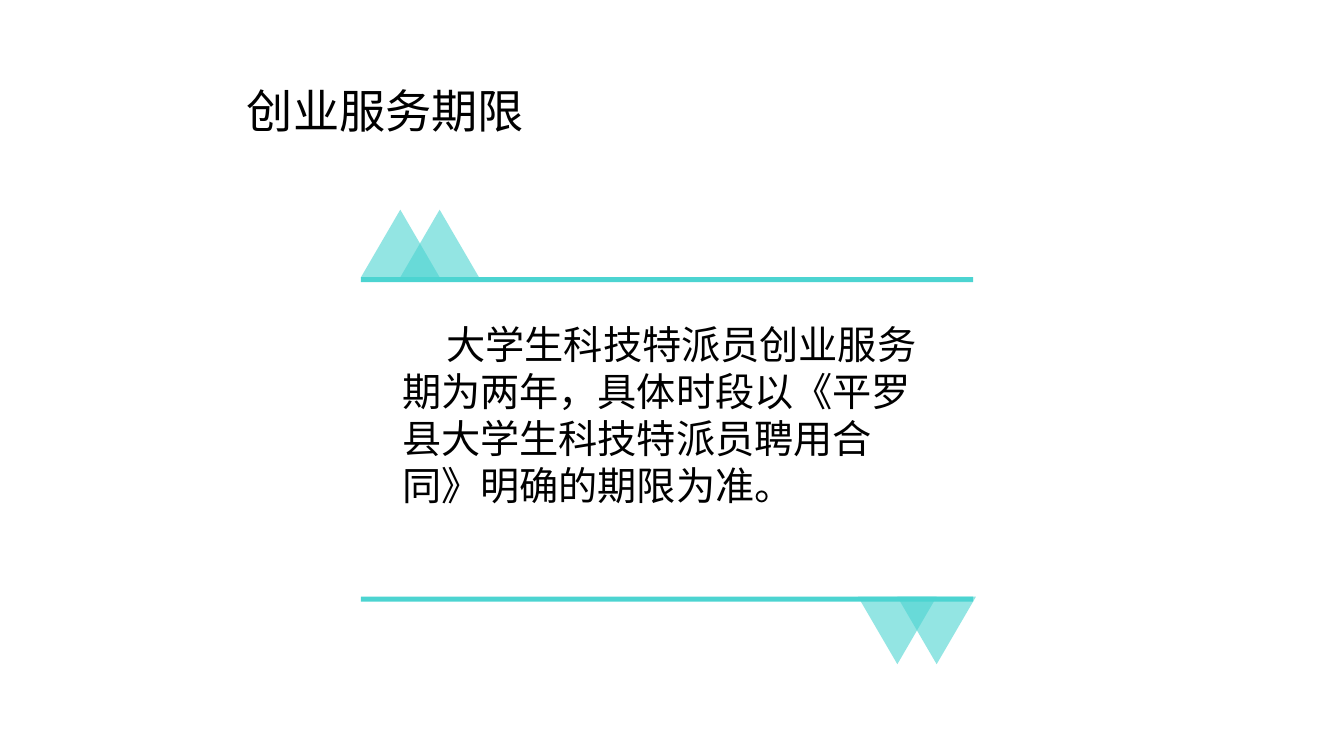
from lxml import etree
from pptx import Presentation, util as u
from pptx.dml.color import RGBColor
from pptx.enum import shapes, text
from pptx.oxml.ns import qn

WIDTH, HEIGHT = u.Inches(13.33), u.Inches(7.5)
TEAL, BLACK = "4CD4D1", "000000"
CJK_FONT = "Noto Sans CJK SC"
BAR_LEFT, BAR_WIDTH, BAR_HEIGHT = 26.86, 45.54, 0.67
TOP_BAR, BOTTOM_BAR = 36.67, 78.93
PEAK_WIDTH, PEAK_HEIGHT = 5.85, 8.93


def color(value):
    """Return the colour of a hex string."""
    return RGBColor.from_string(value)


def area(left, top, width, height):
    """Turn percentages of the slide's size into lengths."""
    return (round(WIDTH * left / 100), round(HEIGHT * top / 100),
            round(WIDTH * width / 100), round(HEIGHT * height / 100))


def add_block(page, kind, place, opacity=100):
    """Add a teal shape without an outline."""
    block = page.shapes.add_shape(kind, *area(*place))
    block.shadow.inherit = False
    block.fill.solid()
    block.fill.fore_color.rgb = color(TEAL)
    block.line.fill.background()
    if opacity < 100:
        fill = block.fill._xPr.find(qn("a:solidFill"))
        etree.SubElement(fill[0], qn("a:alpha")).set("val", str(opacity * 1000))
    return block


def add_peaks(page, left, top, rotation=0):
    """Add two triangles that overlap by half their width."""
    for step in range(2):
        place = (left + step * PEAK_WIDTH / 2, top, PEAK_WIDTH, PEAK_HEIGHT)
        peak = add_block(page, shapes.MSO_SHAPE.ISOSCELES_TRIANGLE, place, 60)
        peak.rotation = rotation


def add_text(page, place, wording, size, font):
    """Add a wrapping text box with one paragraph."""
    box = page.shapes.add_textbox(*area(*place))
    box.text_frame.word_wrap = True
    box.text_frame.text = wording
    span = box.text_frame.paragraphs[0].runs[0]
    span.font.size = u.Pt(size)
    span.font.name = font
    span.font.color.rgb = color(BLACK)
    east_asian = etree.SubElement(span.font._element, qn("a:ea"))
    east_asian.set("typeface", CJK_FONT)
    return box


def main():
    """Build the slide on the service period."""
    deck = Presentation()
    deck.slide_width, deck.slide_height = WIDTH, HEIGHT
    page = deck.slides.add_slide(deck.slide_layouts[6])

    title = add_text(page, (17.63, 5.33, 64.67, 19.33), "创业服务期限", 33, "Calibri")
    title.text_frame.vertical_anchor = text.MSO_ANCHOR.MIDDLE
    title.text_frame.paragraphs[0].line_spacing = 0.9

    add_peaks(page, BAR_LEFT, TOP_BAR - PEAK_HEIGHT)
    add_peaks(page, 63.84, BOTTOM_BAR, 180)
    for top in (TOP_BAR, BOTTOM_BAR):
        add_block(page, shapes.MSO_SHAPE.RECTANGLE, (BAR_LEFT, top, BAR_WIDTH, BAR_HEIGHT))

    body = add_text(
        page, (29.18, 41.73, 41.71, 26.27),
        "大学生科技特派员创业服务期为两年，具体时段以《平罗县大学生科技特派员聘用合同》明确的期限为准。",
        28, CJK_FONT)
    body.text_frame.auto_size = text.MSO_AUTO_SIZE.SHAPE_TO_FIT_TEXT
    para = body.text_frame.paragraphs[0]
    para._p.get_or_add_pPr().set("indent", str(u.Inches(0.44)))

    deck.save("out.pptx")


if __name__ == "__main__":
    main()
